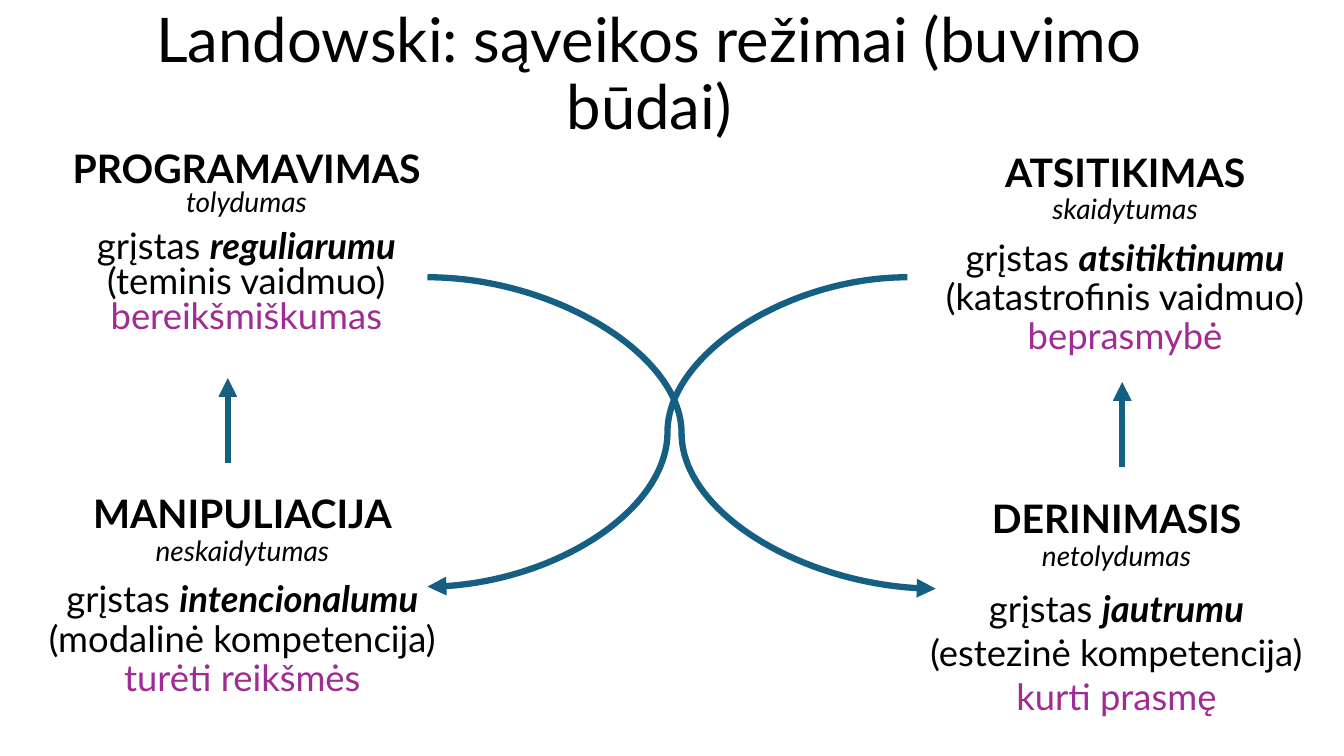
import pptx
import pptx.util
import pptx.dml.color
import pptx.enum.shapes
import pptx.enum.text
import pptx.oxml.ns
import lxml.etree
from dataclasses import dataclass

CENTER = pptx.enum.text.PP_ALIGN.CENTER
CONNECTOR = pptx.enum.shapes.MSO_CONNECTOR


@dataclass(frozen=True)
class Theme:
    font: str = "Lato"
    ink: str = "000000"
    accent: str = "A02B93"
    arrow: str = "156082"
    title: float = 44
    heading: float = 28
    note: float = 20
    body: float = 26
    arrow_width: float = 4.5
    paragraph_gap: float = 10


def apply(target, formats):
    for name, value in formats.items():
        setattr(target, name, value)


class SlideBuilder:
    """Places elements by percentages of the slide's width and height."""

    def __init__(self, deck, theme):
        self.deck, self.theme = deck, theme
        self.page = deck.slides.add_slide(deck.slide_layouts[5])

    def point(self, x, y):
        return (round(self.deck.slide_width * x / 100),
                round(self.deck.slide_height * y / 100))

    def area(self, left, top, width, height):
        return *self.point(left, top), *self.point(width, height)

    def span(self, para, text, size, color=None, **formats):
        span = para.add_run()
        span.text = text
        apply(span.font, {"name": self.theme.font,
                          "size": pptx.util.Pt(size), **formats})
        span.font.color.rgb = pptx.dml.color.RGBColor.from_string(
            color or self.theme.ink)

    def title(self, text, area):
        box = self.page.shapes.title
        apply(box, dict(zip(("left", "top", "width", "height"), self.area(*area))))
        apply(box.text_frame, {
            "word_wrap": True,
            "auto_size": pptx.enum.text.MSO_AUTO_SIZE.NONE,
            "vertical_anchor": pptx.enum.text.MSO_ANCHOR.MIDDLE})
        para = box.text_frame.paragraphs[0]
        apply(para, {"alignment": CENTER, "line_spacing": 0.9})
        self.span(para, text, self.theme.title)

    def regime(self, area, heading, note, basis, role, outcome,
               spacing=(0.9, 0.9), wraps=False):
        theme = self.theme
        frame = self.page.shapes.add_textbox(*self.area(*area)).text_frame
        frame.word_wrap = True
        name, detail = frame.paragraphs[0], frame.add_paragraph()
        for para, lines in zip((name, detail), spacing):
            apply(para, {"alignment": CENTER, "line_spacing": lines,
                         "space_before": pptx.util.Pt(theme.paragraph_gap)})

        self.span(name, heading, theme.heading, bold=True)
        name.add_line_break()
        self.span(name, note, theme.note, italic=True)

        self.span(detail, "grįstas ", theme.body)
        self.span(detail, basis + (" " if wraps else ""), theme.body,
                  bold=True, italic=True)
        if not wraps:
            detail.add_line_break()
        self.span(detail, role, theme.body)
        detail.add_line_break()
        self.span(detail, outcome, theme.body, theme.accent)

    def arrow(self, kind, start, end):
        arrow = self.page.shapes.add_connector(
            kind, *self.point(*start), *self.point(*end))
        arrow.line.width = pptx.util.Pt(self.theme.arrow_width)
        arrow.line.color.rgb = pptx.dml.color.RGBColor.from_string(self.theme.arrow)
        qn = pptx.oxml.ns.qn
        properties = arrow._element.spPr
        lxml.etree.SubElement(properties.find(qn("a:ln")), qn("a:tailEnd"),
                              type="triangle")
        lxml.etree.SubElement(properties, qn("a:effectLst"))


def main():
    deck = pptx.Presentation()
    apply(deck, {"slide_width": pptx.util.Inches(13.33),
                 "slide_height": pptx.util.Inches(7.5)})
    slide = SlideBuilder(deck, Theme())

    slide.title("Landowski: sąveikos režimai (buvimo būdai)",
                (5.18, 0.4, 86.27, 19.33))

    # Four regimes of interaction
    slide.regime((2.93, 19.6, 30.83, 28.13), "PROGRAMAVIMAS", "tolydumas",
                 "reguliarumu", "(teminis vaidmuo)", "bereikšmiškumas",
                 spacing=(0.8, 0.8), wraps=True)
    slide.regime((68.94, 19.6, 29.56, 30.4), "ATSITIKIMAS", "skaidytumas",
                 "atsitiktinumu", "(katastrofinis vaidmuo)", "beprasmybė")
    slide.regime((1.58, 64.8, 32.93, 32.27), "MANIPULIACIJA", "neskaidytumas",
                 "intencionalumu", "(modalinė kompetencija)", "turėti reikšmės",
                 wraps=True)
    slide.regime((67.74, 65.47, 30.68, 31.6), "DERINIMASIS", "netolydumas",
                 "jautrumu", "(estezinė kompetencija)", "kurti prasmę",
                 spacing=(0.9, 1.0))

    # Crossing curves, then upward arrows
    slide.arrow(CONNECTOR.CURVE, (31.81, 36.67), (69.62, 77.87))
    slide.arrow(CONNECTOR.CURVE, (67.52, 36.67), (31.81, 77.6))
    for x, bottom in ((16.95, 61.2), (83.5, 61.73)):
        slide.arrow(CONNECTOR.STRAIGHT, (x, bottom), (x, bottom - 11.2))

    deck.save("out.pptx")


if __name__ == "__main__":
    main()
